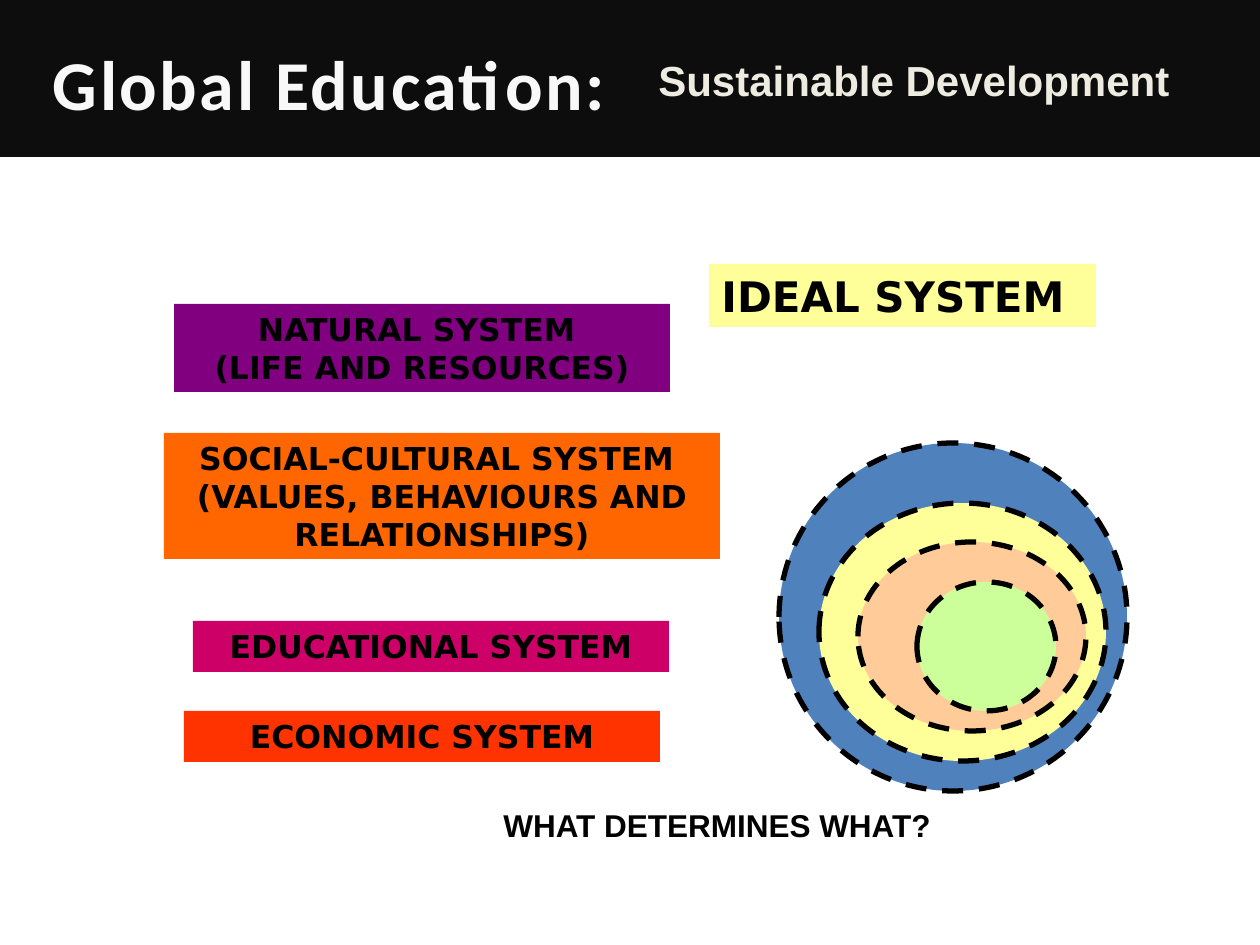
from pptx import Presentation
from pptx.dml.color import RGBColor
from pptx.enum.dml import MSO_LINE
from pptx.enum.shapes import MSO_SHAPE
from pptx.enum.text import MSO_ANCHOR, MSO_AUTO_SIZE, PP_ALIGN
from pptx.util import Emu, Pt


def px(n):
    """Turn pixels at 126 to the inch into EMU."""
    return Emu(round(n * 914400 / 126))


def rgb(value):
    """Turn a hex string into a colour."""
    return RGBColor.from_string(value)


class Deck:
    """Hold the style and the current slide."""

    SANS, LABEL, HEAD = "Arial", "DejaVu Sans", "Calibri"
    INK = "000000"

    def __init__(self):
        """Start a deck with one title-only slide."""
        self.prs = Presentation()
        self.prs.slide_width, self.prs.slide_height = px(1260), px(945)
        self.s = self.prs.slides.add_slide(self.prs.slide_layouts[5])

    def fill_text(self, sp, text, size, font, color, align=PP_ALIGN.LEFT):
        """Put bold text into a shape and format it."""
        tf = sp.text_frame
        tf.word_wrap = True
        tf.auto_size = MSO_AUTO_SIZE.NONE
        tf.vertical_anchor = MSO_ANCHOR.TOP
        p = tf.paragraphs[0]
        p.text = text
        p.alignment = align
        for r in p.runs:
            r.font.size, r.font.name, r.font.bold = Pt(size), font, True
            r.font.color.rgb = rgb(color)

    def shape(self, kind, box, fill):
        """Add a plain filled shape."""
        sp = self.s.shapes.add_shape(kind, *map(px, box))
        sp.shadow.inherit = False
        sp.fill.solid()
        sp.fill.fore_color.rgb = rgb(fill)
        sp.line.fill.background()
        return sp

    def header(self, text, box, band, fill):
        """Place the title over a dark band, with room for a line below it."""
        title = self.s.shapes.title
        self.shape(MSO_SHAPE.RECTANGLE, band, fill).element.addnext(title.element)
        title.left, title.top, title.width, title.height = map(px, box)
        self.fill_text(title, text, 40, self.HEAD, "F8F8F8", PP_ALIGN.CENTER)
        title.text_frame.vertical_anchor = MSO_ANCHOR.MIDDLE
        title.text_frame.margin_bottom = px(91)
        for r in title.text_frame.paragraphs[0].runs:
            r.font._element.set("spc", "150")

    def text(self, text, box, size, color=INK):
        """Add a text box."""
        sp = self.s.shapes.add_textbox(*map(px, box))
        self.fill_text(sp, text, size, self.SANS, color)

    def label(self, text, box, fill, size=18, align=PP_ALIGN.CENTER):
        """Add a coloured box with a caption."""
        sp = self.shape(MSO_SHAPE.RECTANGLE, box, fill)
        self.fill_text(sp, text, size, self.LABEL, self.INK, align)

    def ring(self, box, fill):
        """Add an ellipse with a dashed outline."""
        sp = self.shape(MSO_SHAPE.OVAL, box, fill)
        sp.line.color.rgb = rgb(self.INK)
        sp.line.width = Pt(3)
        sp.line.dash_style = MSO_LINE.DASH


def main():
    """Build the slide and save it."""
    deck = Deck()
    deck.header("Global Education:", (29, 0, 601, 249), (0, 0, 1260, 157), "0D0D0D")
    deck.text("Sustainable Development", (646, 48, 566, 63), 24, "EEECE1")

    systems = [
        ("NATURAL SYSTEM \v(LIFE AND RESOURCES)", (174, 304, 496, 88), "800080"),
        ("SOCIAL-CULTURAL SYSTEM \v(VALUES, BEHAVIOURS AND RELATIONSHIPS)",
         (164, 433, 556, 126), "FF6600"),
        ("EDUCATIONAL SYSTEM", (193, 621, 476, 51), "CC0066"),
        ("ECONOMIC SYSTEM", (184, 711, 476, 51), "FF3300"),
    ]
    for text, box, fill in systems:
        deck.label(text, box, fill)

    rings = [
        ((779, 443, 348, 348), "4F81BD"),
        ((819, 503, 287, 258), "FFFF99"),
        ((858, 542, 228, 189), "FFCC99"),
        ((917, 582, 139, 129), "CCFF99"),
    ]
    for box, fill in rings:
        deck.ring(box, fill)

    deck.label("IDEAL SYSTEM", (709, 264, 387, 63), "FFFF99", 24, PP_ALIGN.LEFT)
    deck.text("WHAT DETERMINES WHAT?", (491, 800, 615, 51), 18)
    deck.prs.save("out.pptx")


if __name__ == "__main__":
    main()
